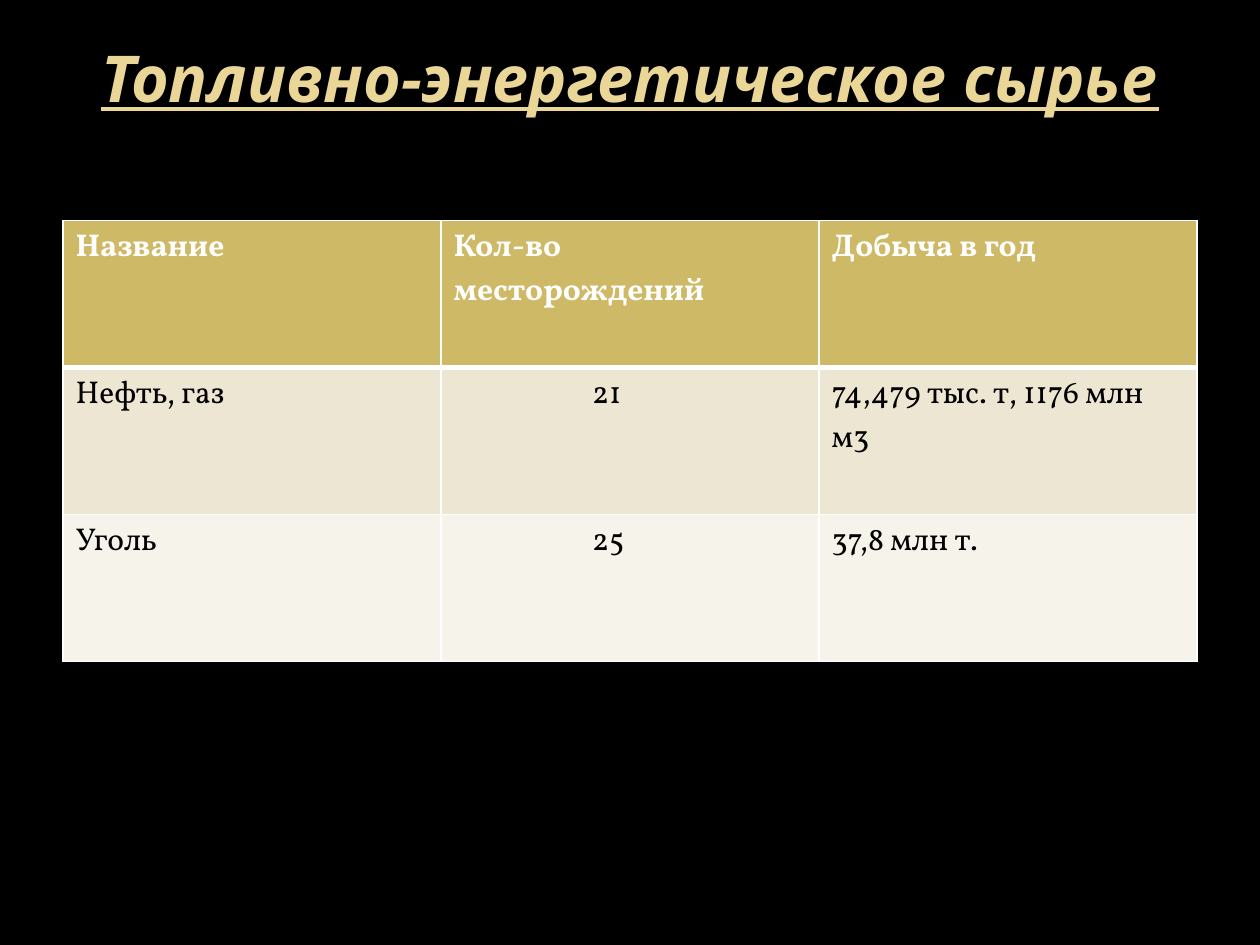
from lxml import etree
from pptx import Presentation
from pptx.dml.color import RGBColor
from pptx.enum import text
from pptx.oxml import ns
from pptx.util import Inches, Pt

TITLE = "Топливно-энергетическое сырье"
ROWS = [
    ("Название", "Кол-во месторождений", "Добыча в год"),
    ("Нефть, газ", "21", "74,479 тыс. т, 1176 млн м3"),
    ("Уголь", "25", "37,8 млн т."),
]
ROW_FILLS = ["CEB966", "EDE6D3", "F6F3EA"]
COUNT_COLUMN = 1
COUNT_INDENT = 1.2


def style_text(frame, font, size, color, bold=False, italic=False, underline=False):
    for para in frame.paragraphs:
        for span in para.runs:
            span.font.name = font
            span.font.size = Pt(size)
            span.font.color.rgb = RGBColor.from_string(color)
            span.font.bold = bold
            span.font.italic = italic
            span.font.underline = underline


def add_borders(cell, widths, color="FFFFFF"):
    """Draw cell borders; widths are points for left, right, top, bottom."""
    properties = cell._tc.get_or_add_tcPr()
    for index, (side, width) in enumerate(zip("LRTB", widths)):
        line = etree.Element(ns.qn(f"a:ln{side}"), w=str(Pt(width)))
        fill = etree.SubElement(line, ns.qn("a:solidFill"))
        etree.SubElement(fill, ns.qn("a:srgbClr"), val=color)
        properties.insert(index, line)


def add_title(slide):
    box = slide.shapes.add_textbox(Inches(0.5), Inches(0.3), Inches(9), Inches(1.25))
    frame = box.text_frame
    frame.word_wrap = True
    frame.margin_top = 0
    frame.vertical_anchor = text.MSO_ANCHOR.TOP
    frame.text = TITLE
    frame.paragraphs[0].alignment = text.PP_ALIGN.CENTER
    style_text(frame, "Open Sans", 36.9, "EAD696", True, True, True)


def add_resource_table(slide):
    table = slide.shapes.add_table(
        len(ROWS), len(ROWS[0]), Inches(0.5), Inches(1.75), Inches(9), Inches(3.5)
    ).table
    for r, values in enumerate(ROWS):
        header = r == 0
        for c, value in enumerate(values):
            cell = table.cell(r, c)
            cell.text = value
            cell.fill.solid()
            cell.fill.fore_color.rgb = RGBColor.from_string(ROW_FILLS[r])
            if c == COUNT_COLUMN and not header:
                cell.margin_left = Inches(COUNT_INDENT)
            style_text(cell.text_frame, "Vollkorn", 18,
                       "FFFFFF" if header else "000000", bold=header)
            add_borders(cell, (1, 1, 3 if r == 1 else 1, 3 if header else 1))


def main():
    deck = Presentation()
    deck.slide_width, deck.slide_height = Inches(10), Inches(7.5)
    slide = deck.slides.add_slide(deck.slide_layouts[6])
    slide.background.fill.solid()
    slide.background.fill.fore_color.rgb = RGBColor.from_string("000000")
    add_title(slide)
    add_resource_table(slide)
    deck.save("out.pptx")


if __name__ == "__main__":
    main()
